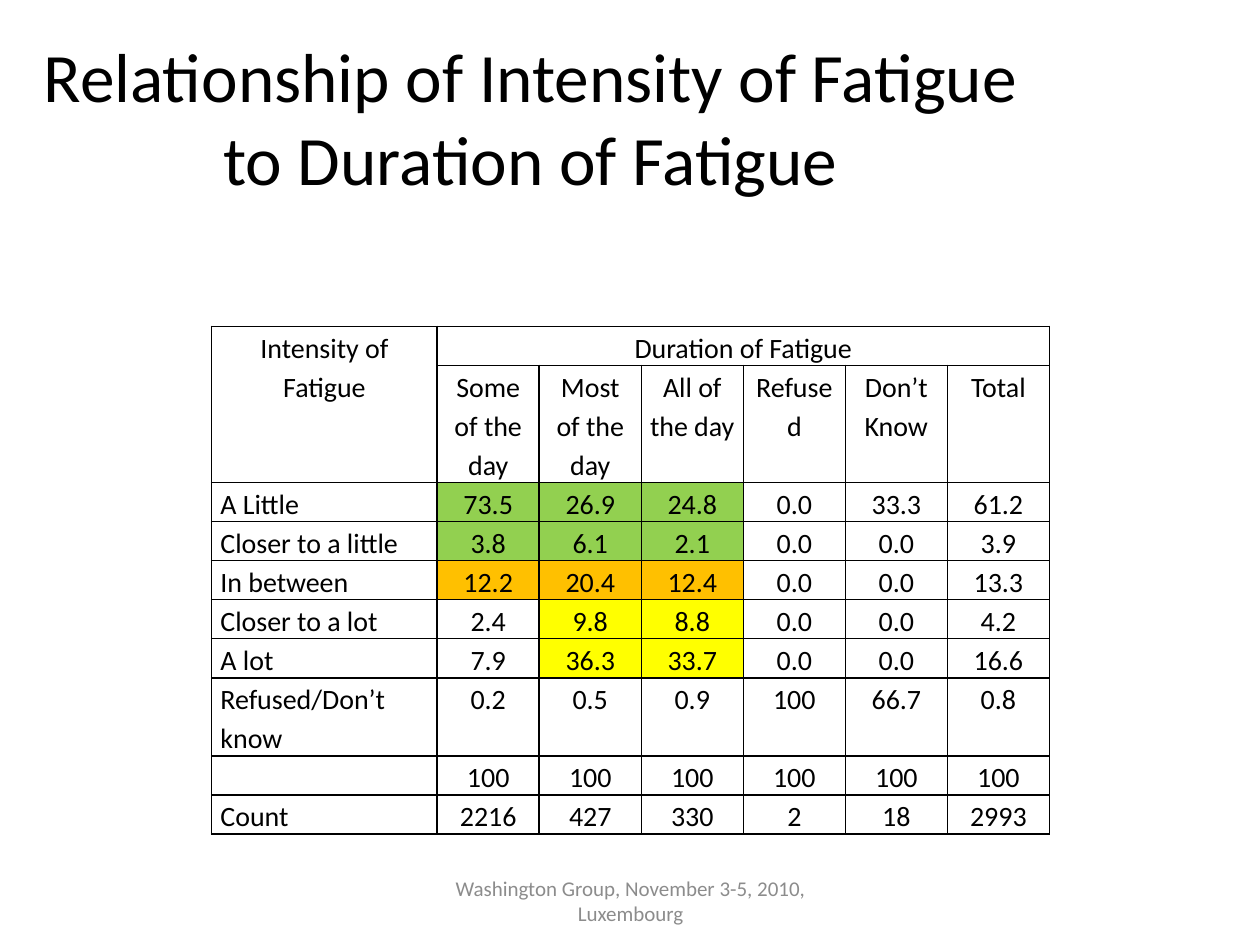
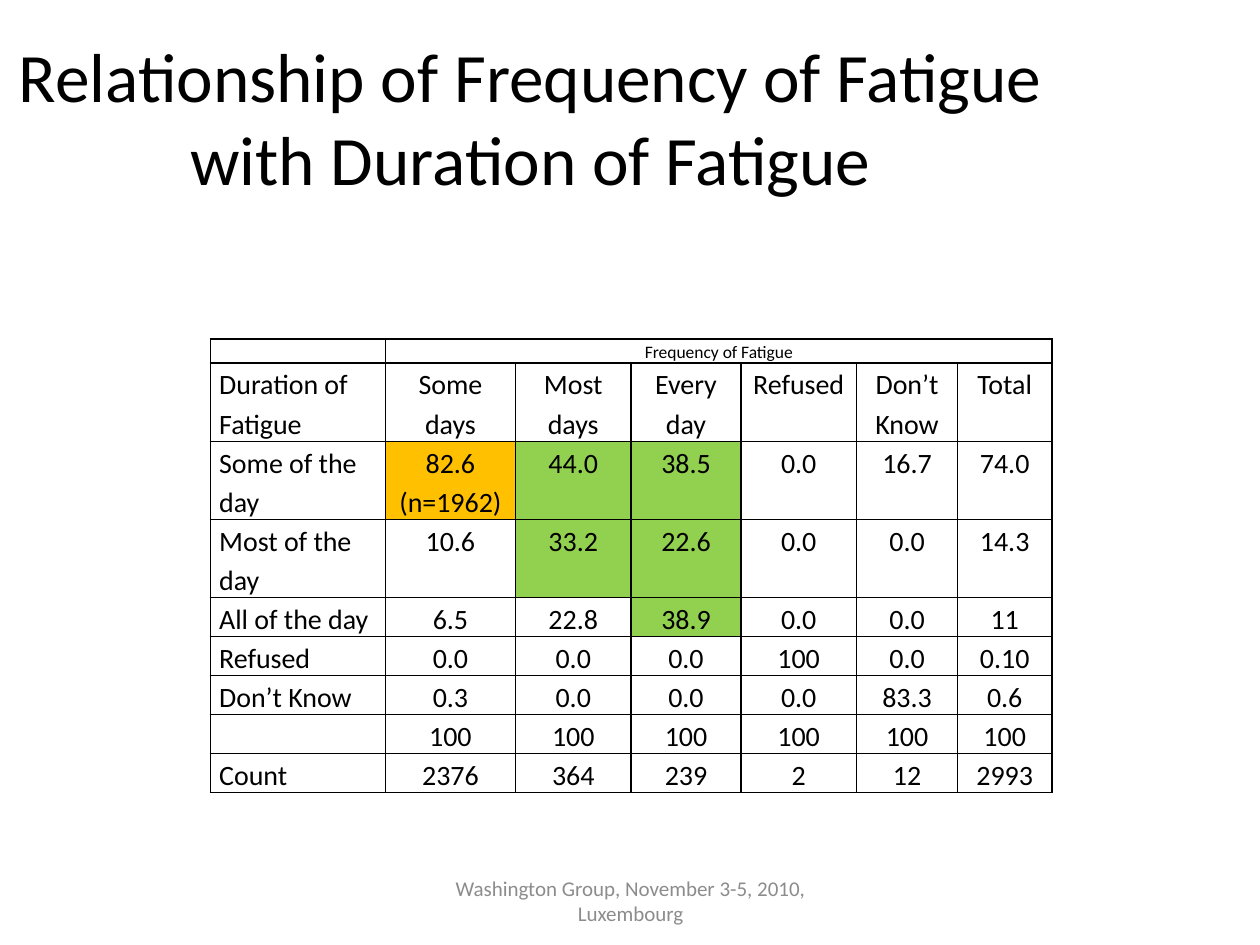
"""Build two slides of cross-tabulated fatigue survey results."""
from lxml import etree
from pptx import Presentation
from pptx.dml.color import RGBColor
from pptx.enum import text
from pptx.oxml import ns
from pptx.util import Inches, Pt

FONT = "Calibri"
BLACK = RGBColor(0x00, 0x00, 0x00)
GREY = RGBColor(0x8C, 0x8C, 0x8C)
GREEN = RGBColor(0x92, 0xD0, 0x50)
ORANGE = RGBColor(0xFF, 0xC0, 0x00)
YELLOW = RGBColor(0xFF, 0xFF, 0x00)
SHADES = {"g": GREEN, "o": ORANGE, "y": YELLOW}
LINE_HEIGHT = 0.31
CELL_SIZE = 16
CENTER = text.PP_ALIGN.CENTER
LEFT = text.PP_ALIGN.LEFT
FOOTER = "Washington Group, November 3-5, 2010, Luxembourg"
TOTALS = ["", *["100"] * 6]

INTENSITY_ROWS = [
    ["Intensity of Fatigue", "Duration of Fatigue", *[""] * 5],
    ["", "Some of the day", "Most of the day", "All of the day", "Refused", "Don’t Know", "Total"],
    ["A Little", "73.5", "26.9", "24.8", "0.0", "33.3", "61.2"],
    ["Closer to a little", "3.8", "6.1", "2.1", "0.0", "0.0", "3.9"],
    ["In between", "12.2", "20.4", "12.4", "0.0", "0.0", "13.3"],
    ["Closer to a lot", "2.4", "9.8", "8.8", "0.0", "0.0", "4.2"],
    ["A lot", "7.9", "36.3", "33.7", "0.0", "0.0", "16.6"],
    ["Refused/Don’t know", "0.2", "0.5", "0.9", "100", "66.7", "0.8"],
    TOTALS,
    ["Count", "2216", "427", "330", "2", "18", "2993"],
]
INTENSITY_SHADES = {2: " ggg", 3: " ggg", 4: " ooo", 5: "  yy", 6: "  yy"}

FREQUENCY_ROWS = [
    ["", "Frequency of Fatigue", *[""] * 5],
    ["Duration of Fatigue", "Some days", "Most days", "Every day", "Refused", "Don’t Know", "Total"],
    ["Some of the day", "82.6\n(n=1962)", "44.0", "38.5", "0.0", "16.7", "74.0"],
    ["Most of the day", "10.6", "33.2", "22.6", "0.0", "0.0", "14.3"],
    ["All of the day", "6.5", "22.8", "38.9", "0.0", "0.0", "11"],
    ["Refused", "0.0", "0.0", "0.0", "100", "0.0", "0.10"],
    ["Don’t Know", "0.3", "0.0", "0.0", "0.0", "83.3", "0.6"],
    TOTALS,
    ["Count", "2376", "364", "239", "2", "12", "2993"],
]
FREQUENCY_SHADES = {2: " ogg", 3: "  gg", 4: "   g"}


def add_words(paragraph, words, size, color=BLACK, align=CENTER):
    """Add one styled run to a paragraph."""
    paragraph.alignment = align
    run = paragraph.add_run()
    run.text = words
    run.font.name = FONT
    run.font.size = Pt(size)
    run.font.color.rgb = color


def add_title(slide, words):
    """Place and fill the title placeholder."""
    title = slide.shapes.title
    title.left, title.top = Inches(0), Inches(0.3)
    title.width, title.height = Inches(8.42), Inches(1.25)
    frame = title.text_frame
    frame.auto_size = text.MSO_AUTO_SIZE.NONE
    frame.vertical_anchor = text.MSO_ANCHOR.MIDDLE
    add_words(frame.paragraphs[0], words, 39.6)


def add_footer(slide):
    """Add the meeting line at the foot of the slide."""
    footer = slide.shapes.add_textbox(Inches(3.42), Inches(6.95), Inches(3.17), Inches(0.4))
    frame = footer.text_frame
    frame.word_wrap = True
    frame.vertical_anchor = text.MSO_ANCHOR.MIDDLE
    add_words(frame.paragraphs[0], FOOTER, 12, GREY)


def add_borders(cell):
    """Draw a black one-point line on each side of a cell."""
    properties = cell._tc.get_or_add_tcPr()
    for side in ("a:lnL", "a:lnR", "a:lnT", "a:lnB"):
        line = etree.SubElement(properties, ns.qn(side), w=str(Pt(1)))
        fill = etree.SubElement(line, ns.qn("a:solidFill"))
        etree.SubElement(fill, ns.qn("a:srgbClr"), val=str(BLACK))


def fill_cell(cell, words, size, align, shade):
    """Format a cell and write its lines as paragraphs."""
    cell.margin_left = cell.margin_right = Inches(0.07)
    cell.margin_top = cell.margin_bottom = 0
    add_borders(cell)
    if shade:
        cell.fill.solid()
        cell.fill.fore_color.rgb = shade
    else:
        cell.fill.background()
    frame = cell.text_frame
    for index, line in enumerate(words.split("\n")):
        paragraph = frame.add_paragraph() if index else frame.paragraphs[0]
        paragraph.line_spacing = 1.15
        if line:
            add_words(paragraph, line, size, align=align)
        else:
            etree.SubElement(paragraph._p, ns.qn("a:endParaRPr"), sz=str(size * 100))


def add_crosstab(slide, left, top, widths, heights, rows, shades, head_size, corner_rows):
    """Add a table whose first row spans all value columns."""
    frame = slide.shapes.add_table(
        len(rows), len(widths), Inches(left), Inches(top),
        Inches(sum(widths)), Inches(sum(heights)))
    table = frame.table
    table.first_row = table.horz_banding = False
    for column, width in zip(table.columns, widths):
        column.width = Inches(width)
    for row, height in zip(table.rows, heights):
        row.height = Inches(height)
    for r, row in enumerate(rows):
        size = CELL_SIZE if r else head_size
        marks = shades.get(r, "").ljust(len(row))
        for c, words in enumerate(row):
            align = CENTER if c or r == 0 else LEFT
            fill_cell(table.cell(r, c), words, size, align, SHADES.get(marks[c]))
    table.cell(0, 1).merge(table.cell(0, len(widths) - 1))
    if corner_rows > 1:
        table.cell(0, 0).merge(table.cell(corner_rows - 1, 0))


def add_slide(deck, title):
    """Add a slide with its title and footer."""
    slide = deck.slides.add_slide(deck.slide_layouts[5])
    add_footer(slide)
    add_title(slide, title)
    return slide


def main():
    """Build and save the deck."""
    deck = Presentation()
    deck.slide_width, deck.slide_height = Inches(10), Inches(7.5)

    intensity = add_slide(deck, "Relationship of Intensity of Fatigue to Duration of Fatigue")
    heights = [LINE_HEIGHT * lines for lines in (1, 3, 1, 1, 1, 1, 1, 2, 1, 1)]
    add_crosstab(intensity, 1.68, 2.59, [1.79] + [0.81] * 6, heights,
                 INTENSITY_ROWS, INTENSITY_SHADES, CELL_SIZE, 2)

    frequency = add_slide(deck, "Relationship of Frequency of Fatigue with Duration of Fatigue")
    heights = [0.19] + [LINE_HEIGHT * lines for lines in (2, 2, 2, 1, 1, 1, 1, 1)]
    add_crosstab(frequency, 1.67, 2.69, [1.39, 1.03, 0.92, 0.87, 0.92, 0.8, 0.75], heights,
                 FREQUENCY_ROWS, FREQUENCY_SHADES, 10, 1)

    deck.save("out.pptx")


if __name__ == "__main__":
    main()
